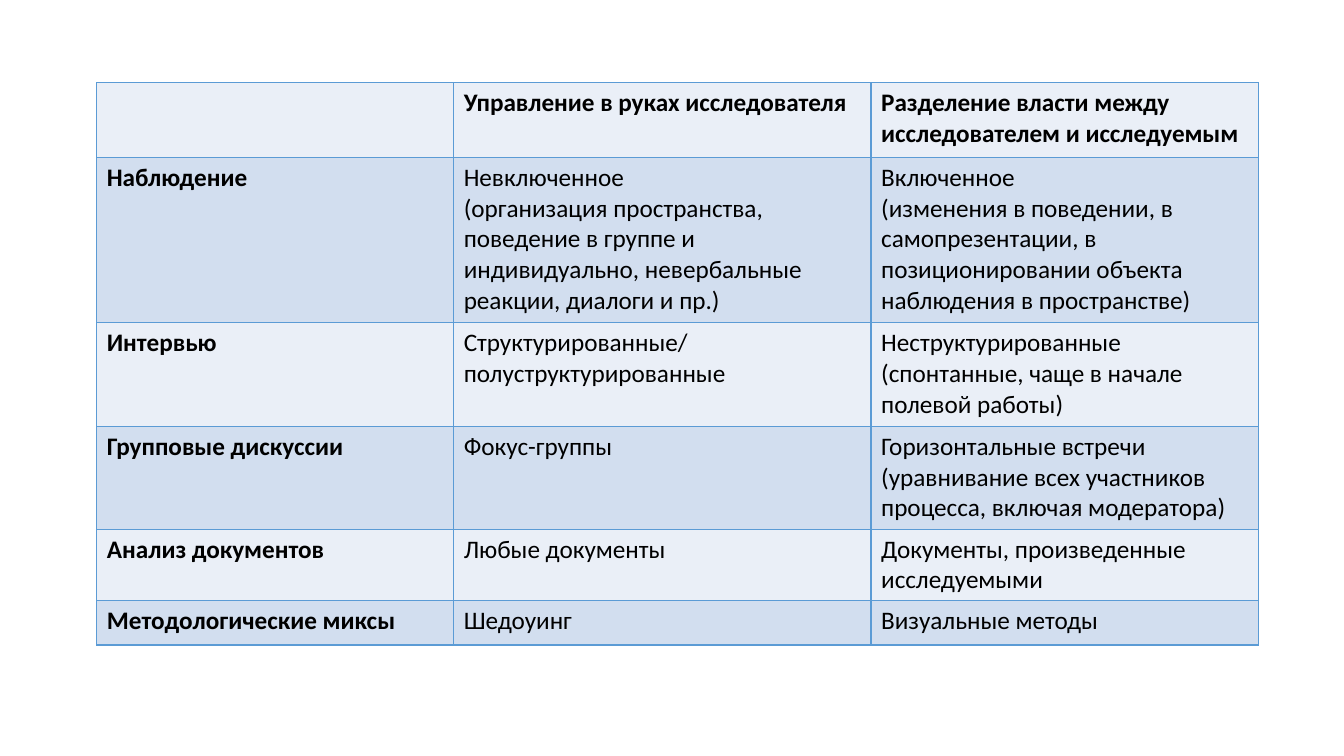
from lxml.etree import SubElement
from pptx import Presentation
from pptx.dml.color import RGBColor
from pptx.oxml.ns import qn
from pptx.util import Inches, Pt

BLACK = RGBColor(0x00, 0x00, 0x00)
BORDER_BLUE = RGBColor(0x5B, 0x9B, 0xD5)
PALE_BAND = RGBColor(0xEA, 0xEF, 0xF7)
BLUE_BAND = RGBColor(0xD2, 0xDE, 0xEF)

COLUMN_WIDTHS = [3.54, 4.14, 3.84]
ROW_HEIGHTS = [0.74, 1.64, 1.03, 1.02, 0.71, 0.44]

# Each line of a cell is a paragraph
METHODS = [
    ["", "Управление в руках исследователя",
     "Разделение власти между исследователем и исследуемым"],
    ["Наблюдение",
     "Невключенное\n(организация пространства, поведение в группе и "
     "индивидуально, невербальные реакции, диалоги и пр.)",
     "Включенное\n(изменения в поведении, в самопрезентации, в "
     "позиционировании объекта наблюдения в пространстве)"],
    ["Интервью", "Структурированные/полуструктурированные",
     "Неструктурированные (спонтанные, чаще в начале полевой работы)"],
    ["Групповые дискуссии", "Фокус-группы",
     "Горизонтальные встречи (уравнивание всех участников процесса, "
     "включая модератора)"],
    ["Анализ документов", "Любые документы",
     "Документы, произведенные исследуемыми"],
    ["Методологические миксы", "Шедоуинг", "Визуальные методы"],
]


class SlideBuilder:
    font_name = "Calibri"
    font_size = Pt(18)
    border_width = Pt(1)

    def __init__(self, presentation):
        self.slide = presentation.slides.add_slide(presentation.slide_layouts[6])

    def add_table(self, left, top, widths, heights, rows):
        table = self.slide.shapes.add_table(
            len(heights), len(widths), Inches(left), Inches(top),
            Inches(sum(widths)), Inches(sum(heights))).table
        for column, width in zip(table.columns, widths):
            column.width = Inches(width)
        for row, height in zip(table.rows, heights):
            row.height = Inches(height)
        for i, texts in enumerate(rows):
            for j, text in enumerate(texts):
                self.fill_cell(table.cell(i, j), text,
                               BLUE_BAND if i % 2 else PALE_BAND,
                               bold=i == 0 or j == 0)

    def fill_cell(self, cell, text, fill_color, bold):
        cell.text = text
        for paragraph in cell.text_frame.paragraphs:
            font = paragraph.font
            font.name = self.font_name
            font.size = self.font_size
            font.bold = bold
            font.color.rgb = BLACK
        # Borders come before the fill in the cell properties
        self.add_borders(cell)
        cell.fill.solid()
        cell.fill.fore_color.rgb = fill_color

    def add_borders(self, cell):
        properties = cell._tc.get_or_add_tcPr()
        for side in ("a:lnL", "a:lnR", "a:lnT", "a:lnB"):
            line = SubElement(properties, qn(side), w=str(self.border_width))
            fill = SubElement(line, qn("a:solidFill"))
            SubElement(fill, qn("a:srgbClr"), val=str(BORDER_BLUE))


def main():
    presentation = Presentation()
    presentation.slide_width = Inches(13.33)
    presentation.slide_height = Inches(7.5)

    # Table of research methods
    builder = SlideBuilder(presentation)
    builder.add_table(0.96, 0.82, COLUMN_WIDTHS, ROW_HEIGHTS, METHODS)

    presentation.save("out.pptx")


if __name__ == "__main__":
    main()
